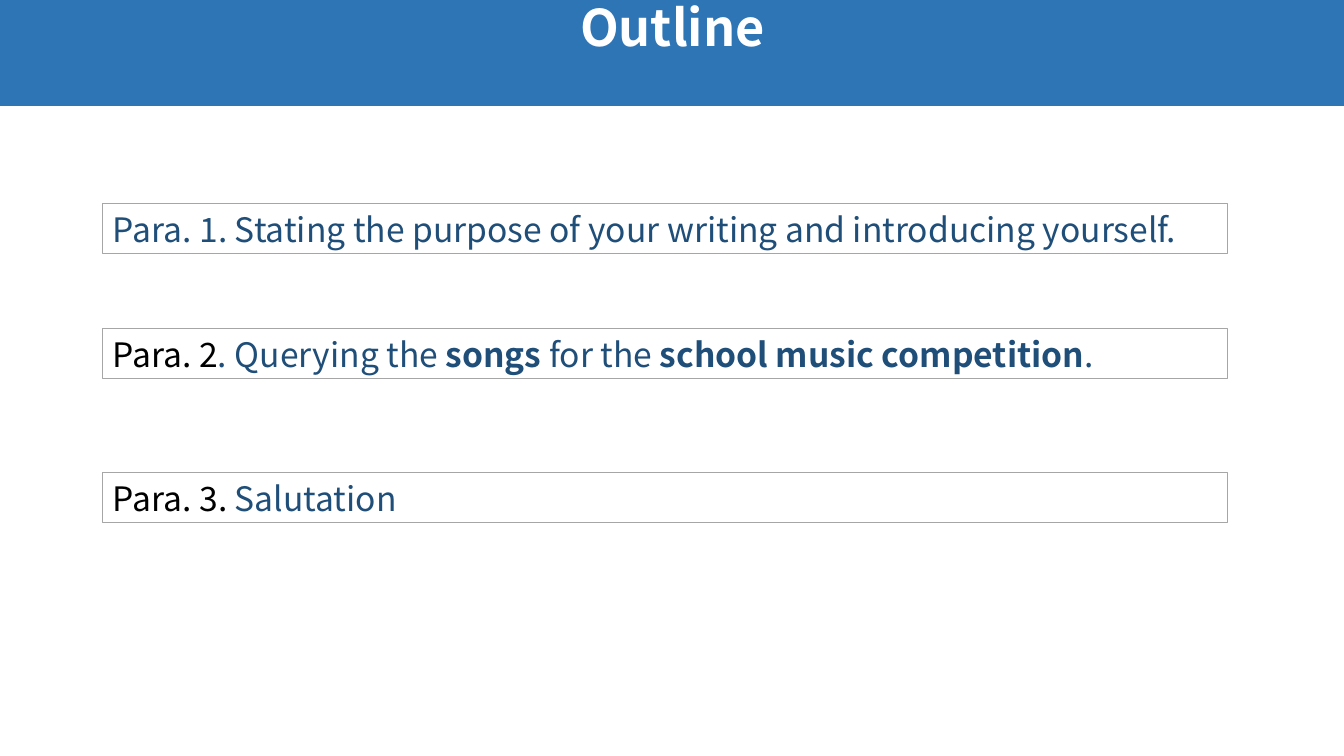
from pptx import Presentation
from pptx.dml.color import RGBColor
from pptx.enum.shapes import MSO_SHAPE
from pptx.enum.text import MSO_ANCHOR, MSO_AUTO_SIZE, PP_ALIGN
from pptx.util import Emu, Pt

TITLE = "Outline"
PARAGRAPHS = [
    (204, [("Para. 1. Stating the purpose of your writing and introducing yourself.", "navy", False)]),
    (329, [
        ("Para. 2", "black", False),
        (". Querying the ", "navy", False),
        ("songs", "navy", True),
        (" for the ", "navy", False),
        ("school music competition", "navy", True),
        (".", "navy", False),
    ]),
    (473, [("Para. 3. ", "black", False), ("Salutation", "navy", False)]),
]
COLORS = {"band": "2E75B6", "navy": "1F4E79", "black": "000000", "white": "FFFFFF", "border": "A6A6A6"}
FONT = "Noto Sans CJK SC"
SLIDE_WIDTH, SLIDE_HEIGHT = 1344, 756
BAND = (-1, -2, 1347, 108)
BOX_LEFT, BOX_WIDTH, BOX_HEIGHT = 103, 1125, 50


def px(length):
    return Emu(round(length * 914400 / 100.8))


def color(name):
    return RGBColor.from_string(COLORS[name])


def write(shape, runs, size, anchor, align=PP_ALIGN.LEFT, spacing=1.0):
    frame = shape.text_frame
    frame.word_wrap = True
    frame.auto_size = MSO_AUTO_SIZE.NONE
    frame.vertical_anchor = anchor
    paragraph = frame.paragraphs[0]
    paragraph.alignment = align
    paragraph.line_spacing = spacing
    for words, ink, bold in runs:
        run = paragraph.add_run()
        run.text = words
        run.font.name = FONT
        run.font.size = Pt(size)
        run.font.bold = bold
        run.font.color.rgb = color(ink)


def fill(shape, name):
    shape.fill.solid()
    shape.fill.fore_color.rgb = color(name)


deck = Presentation()
deck.slide_width, deck.slide_height = px(SLIDE_WIDTH), px(SLIDE_HEIGHT)
slide = deck.slides.add_slide(deck.slide_layouts[5])

heading = slide.shapes.title
heading.left, heading.top, heading.width, heading.height = map(px, BAND)
fill(heading, "band")
write(heading, [(TITLE, "white", True)], 36, MSO_ANCHOR.TOP, align=PP_ALIGN.CENTER, spacing=0.9)

for top, runs in PARAGRAPHS:
    box = slide.shapes.add_shape(
        MSO_SHAPE.RECTANGLE, px(BOX_LEFT), px(top), px(BOX_WIDTH), px(BOX_HEIGHT))
    box.shadow.inherit = False
    fill(box, "white")
    box.line.color.rgb = color("border")
    box.line.width = Pt(0.75)
    write(box, runs, 24, MSO_ANCHOR.MIDDLE)

deck.save("out.pptx")
